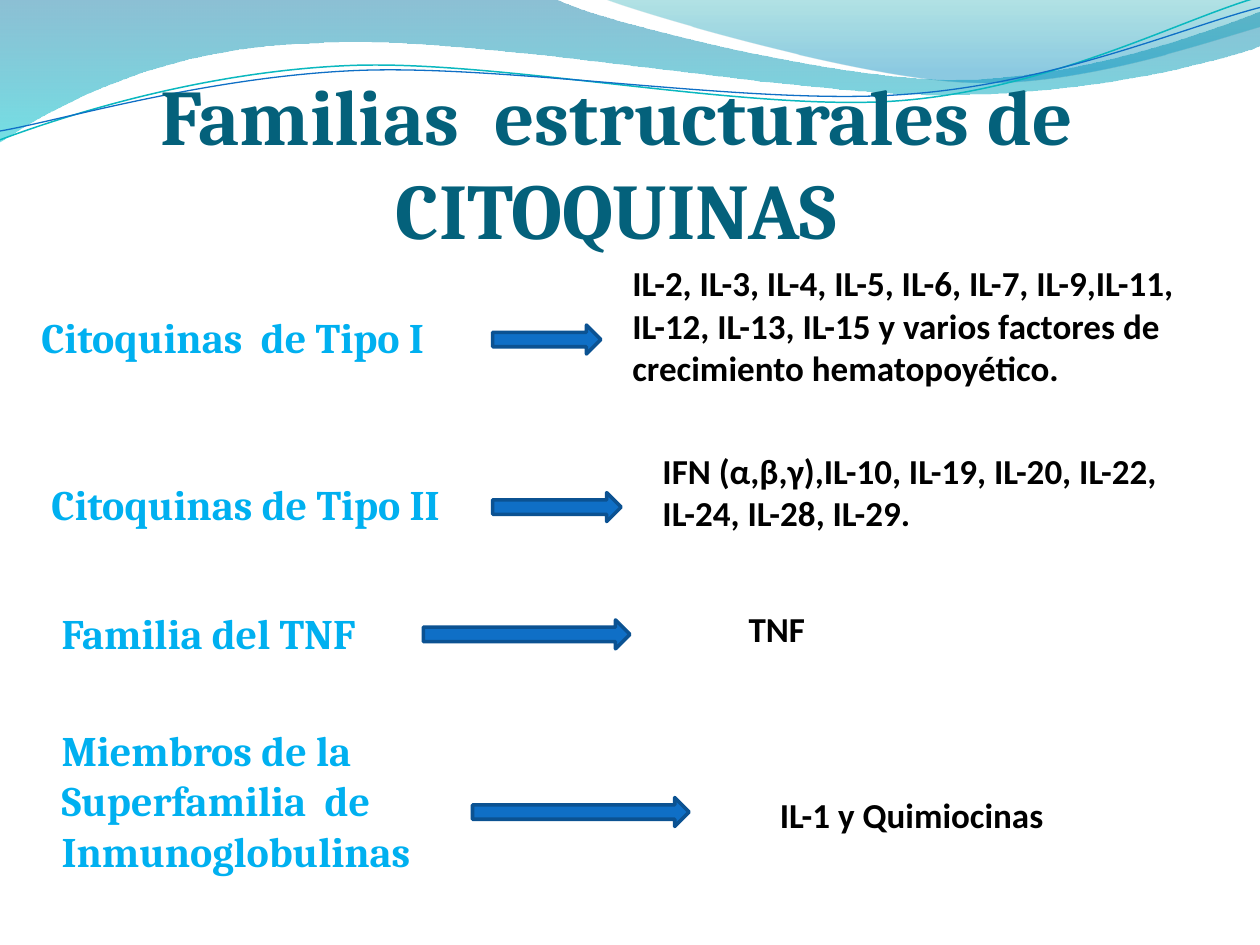
import math

from lxml import etree
from pptx import Presentation
from pptx.dml.color import RGBColor
from pptx.enum import shapes, text
from pptx.oxml.ns import qn
from pptx.util import Inches, Pt

HEADING_FONT, BODY_FONT = "Cambria", "Calibri"
TITLE_COLOR, FAMILY_COLOR, MEMBER_COLOR = "04617B", "00B0F0", "000000"
ARROW_FILL, ARROW_LINE = "0F6FC6", "0B5292"
ARROW_HEIGHT = 0.23
STRAND_TILT = -2.7

# A wave is a start point and segments: one point is a line, three a Bezier curve.
BANDS = [
    ((0, 0), [
        [(4.4, -0.01)],
        [(4.76, 0.17), (6.64, 0.63), (7.58, 0.63)],
        [(8.53, 0.63), (9.58, 0.26), (10, 0.09)],
        [(10.01, 0.36)],
        [(9.83, 0.44), (8.7, 0.76), (7.46, 0.75)],
        [(6.22, 0.75), (3.82, 0.28), (2.57, 0.34)],
        [(1.29, 0.36), (0.46, 0.83), (-0.01, 1.13)],
    ], [(0, "0074A1", 45), (1, "00C6CF", 55)]),
    ((4.79, -0.01), [
        [(5.09, 0.11), (6.82, 0.62), (7.69, 0.65)],
        [(8.56, 0.69), (9.61, 0.32), (10, 0.21)],
        [(10, 0)],
    ], [(0, "00A1A9", 30), (0.8, "008BBF", 45)]),
]
# Each strand ends with its color, its width and the centre of its tilt.
STRANDS = [
    ((0, 1.11), [
        [(0.48, 0.93), (1.58, 0.57), (2.77, 0.52)],
        [(3.95, 0.47), (5.93, 0.89), (7.13, 0.8)],
        [(8.33, 0.71), (9.38, 0.15), (9.98, -0.02)],
    ], "0AB8BF", 0.85, (4.99, 0.58)),
    ((0, 1.04), [
        [(0.47, 0.96), (1.64, 0.61), (2.83, 0.56)],
        [(4.03, 0.51), (5.97, 0.84), (7.17, 0.75)],
        [(8.36, 0.67), (9.41, 0.21), (10, 0.06)],
    ], "0F6FC6", 0.75, (5, 0.59)),
]

# Each row: family (text, box), arrow (left, top, width), members (text, box).
FAMILIES = [
    ("Citoquinas  de Tipo I", (0.23, 2.42, 3.52, 0.5), (3.91, 2.58, 0.86),
     "IL-2, IL-3, IL-4, IL-5, IL-6, IL-7, IL-9,IL-11, IL-12, IL-13, IL-15 "
     "y varios factores de crecimiento hematopoyético.", (4.92, 2.03, 4.61, 1.11)),
    ("Citoquinas de Tipo II", (0.31, 3.75, 3.52, 0.5), (3.91, 3.91, 1.02),
     "IFN (α,β,γ),IL-10, IL-19, IL-20, IL-22, IL-24, IL-28, IL-29.",
     (5.16, 3.52, 4.3, 0.77)),
    ("Familia del TNF", (0.39, 4.77, 3.13, 0.5), (3.36, 4.92, 1.64),
     " TNF", (5.78, 4.77, 3.13, 0.44)),
    ("Miembros de la Superfamilia  de Inmunoglobulinas", (0.39, 5.7, 3.2, 1.31),
     (3.75, 6.33, 1.72), "IL-1 y Quimiocinas", (6.09, 6.25, 2.42, 0.44)),
]


def rgb(color):
    return RGBColor.from_string(color)


def inches(*lengths):
    return [Inches(length) for length in lengths]


def turn(point, centre, degrees):
    angle = math.radians(degrees)
    dx, dy = point[0] - centre[0], point[1] - centre[1]
    return (centre[0] + dx * math.cos(angle) - dy * math.sin(angle),
            centre[1] + dx * math.sin(angle) + dy * math.cos(angle))


def add_wave(slide, start, segments, close):
    """Build a freeform through all points, then bend each group of three."""
    builder = slide.shapes.build_freeform(*inches(*start))
    points = [inches(*point) for segment in segments for point in segment]
    builder.add_line_segments(points, close=close)
    wave = builder.convert_to_shape()
    wave.shadow.inherit = False
    lines = list(wave._element.iter(qn("a:lnTo")))
    for segment in segments:
        group, lines = lines[:len(segment)], lines[len(segment):]
        if len(segment) == 3:
            curve = etree.Element(qn("a:cubicBezTo"))
            group[0].addprevious(curve)
            for line in group:
                curve.append(line[0])
                line.getparent().remove(line)
    return wave


def add_band(slide, start, segments, stops):
    band = add_wave(slide, start, segments, True)
    band.line.fill.background()
    band.fill.gradient()
    band.fill.gradient_angle = 270
    for stop, (position, color, opacity) in zip(band.fill.gradient_stops, stops):
        stop.position = position
        stop.color.rgb = rgb(color)
    colors = band._element.spPr.iter(qn("a:srgbClr"))
    for color_element, (_, _, opacity) in zip(colors, stops):
        etree.SubElement(color_element, qn("a:alpha")).set("val", str(opacity * 1000))


def add_strand(slide, start, segments, color, width, centre):
    level_start = turn(start, centre, -STRAND_TILT)
    level_segments = [[turn(point, centre, -STRAND_TILT) for point in segment]
                      for segment in segments]
    strand = add_wave(slide, level_start, level_segments, False)
    strand.rotation = STRAND_TILT
    strand.fill.background()
    strand.line.color.rgb = rgb(color)
    strand.line.width = Pt(width)


def add_run(paragraph, wording, font, size, color):
    run = paragraph.add_run()
    run.text = wording
    run.font.name = font
    run.font.size = Pt(size)
    run.font.bold = True
    run.font.color.rgb = rgb(color)


def place_title(slide, wording):
    title = slide.shapes.title
    title.left, title.top, title.width, title.height = inches(0.39, 1.25, 9, 0.78)
    frame = title.text_frame
    frame.auto_size = text.MSO_AUTO_SIZE.NONE
    frame.vertical_anchor = text.MSO_ANCHOR.BOTTOM
    frame.margin_left = frame.margin_right = frame.margin_bottom = 0
    frame.margin_top = Inches(0.05)
    paragraph = frame.paragraphs[0]
    paragraph.alignment = text.PP_ALIGN.CENTER
    add_run(paragraph, wording, HEADING_FONT, 45, TITLE_COLOR)
    # Bring the title in front of the waves.
    slide.shapes._spTree.append(title._element)


def add_label(slide, wording, box, font, size, color):
    frame = slide.shapes.add_textbox(*inches(*box)).text_frame
    frame.word_wrap = True
    frame.auto_size = text.MSO_AUTO_SIZE.SHAPE_TO_FIT_TEXT
    add_run(frame.paragraphs[0], wording, font, size, color)


def add_arrow(slide, left, top, width):
    arrow = slide.shapes.add_shape(
        shapes.MSO_SHAPE.RIGHT_ARROW, *inches(left, top, width, ARROW_HEIGHT))
    arrow.shadow.inherit = False
    arrow.fill.solid()
    arrow.fill.fore_color.rgb = rgb(ARROW_FILL)
    arrow.line.color.rgb = rgb(ARROW_LINE)
    arrow.line.width = Pt(2)


def main():
    deck = Presentation()
    deck.slide_width, deck.slide_height = inches(10, 7.5)
    slide = deck.slides.add_slide(deck.slide_layouts[5])
    for band in BANDS:
        add_band(slide, *band)
    for strand in STRANDS:
        add_strand(slide, *strand)
    place_title(slide, "Familias  estructurales de CITOQUINAS")
    for family, family_box, arrow, members, members_box in FAMILIES:
        add_label(slide, family, family_box, HEADING_FONT, 24, FAMILY_COLOR)
        add_label(slide, members, members_box, BODY_FONT, 20, MEMBER_COLOR)
        add_arrow(slide, *arrow)
    deck.save("out.pptx")


if __name__ == "__main__":
    main()
